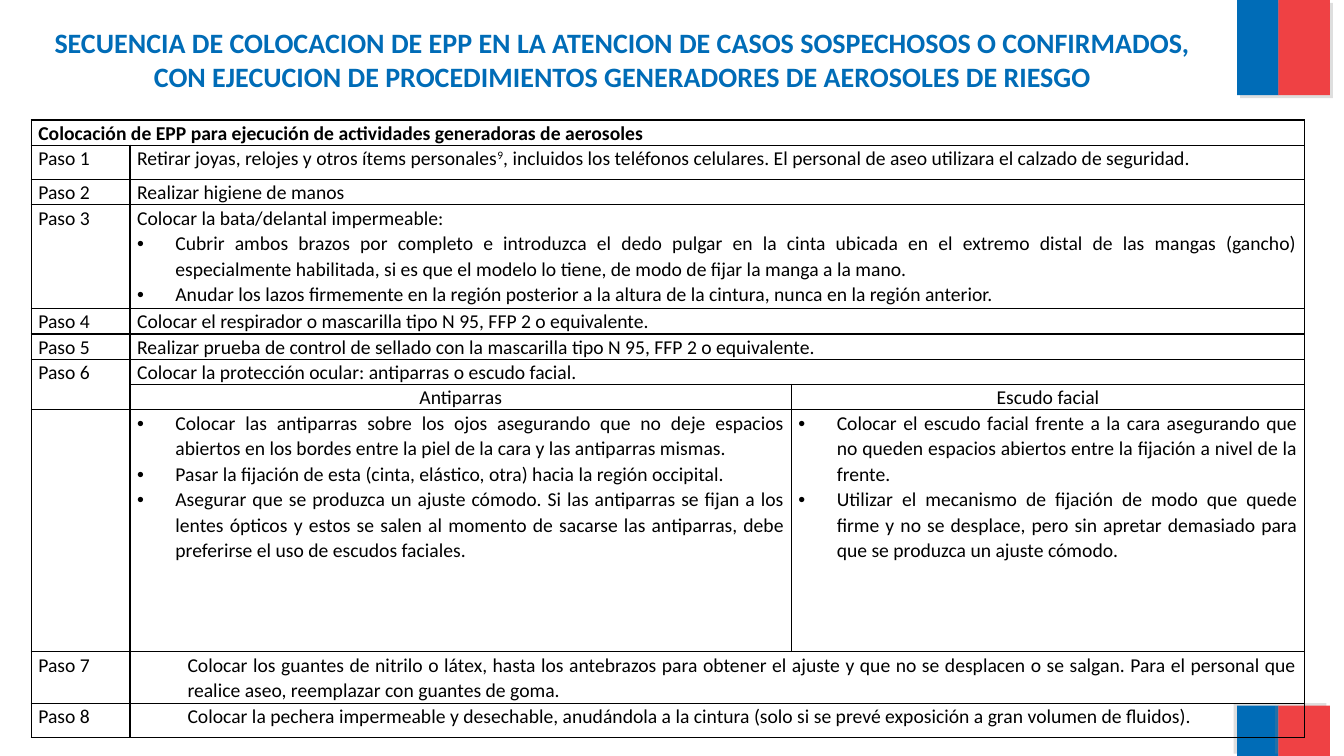
from lxml import etree
from pptx import Presentation, util as u
from pptx.dml.color import RGBColor
from pptx.enum import shapes, text
from pptx.oxml.ns import qn

COLORS = {"blue": "006CB7", "red": "EF4144", "black": "000000", "shadow": "808080"}
ALIGN = text.PP_ALIGN
BULLET = {"left": 0.38, "hanging": 0.38, "bullet": "•"}
INDENT = {"left": 0.5}

COLUMNS = [7.35, 49.21, 38.18]  # percent of the slide's width
LINE, TALL = 3.35, 4.53  # percent of the slide's height
ROWS = [LINE, TALL, LINE, 13.73, LINE, LINE, LINE, LINE, 32, 6.8, TALL]

TITLE = ("SECUENCIA DE COLOCACION DE EPP EN LA ATENCION DE CASOS SOSPECHOSOS O CONFIRMADOS, "
         "CON EJECUCION DE PROCEDIMIENTOS GENERADORES DE AEROSOLES DE RIESGO")
HEADING = "Colocación de EPP para ejecución de actividades generadoras de aerosoles"

# Table row -> paragraphs of the step, each with its format; ^ encloses a superscript
STEPS = {
    1: [("Retirar joyas, relojes y otros ítems personales^9^, incluidos los teléfonos celulares. "
         "El personal de aseo utilizara el calzado de seguridad.", {})],
    2: [("Realizar higiene de manos", {})],
    3: [("Colocar la bata/delantal impermeable:", {}),
        ("Cubrir ambos brazos por completo e introduzca el dedo pulgar en la cinta ubicada en el "
         "extremo distal de las mangas (gancho) especialmente habilitada, si es que el modelo lo "
         "tiene, de modo de fijar la manga a la mano.", BULLET),
        ("Anudar los lazos firmemente en la región posterior a la altura de la cintura, nunca en "
         "la región anterior.", BULLET)],
    4: [("Colocar el respirador o mascarilla tipo N 95, FFP 2 o equivalente.", {})],
    5: [("Realizar prueba de control de sellado con la mascarilla tipo N 95, FFP 2 o "
         "equivalente.", {})],
    6: [("Colocar la protección ocular: antiparras o escudo facial.", {})],
    9: [("Colocar los guantes de nitrilo o látex, hasta los antebrazos para obtener el ajuste y "
         "que no se desplacen o se salgan. Para el personal que realice aseo, reemplazar con "
         "guantes de goma.", INDENT)],
    10: [("Colocar la pechera impermeable y desechable, anudándola a la cintura (solo si se prevé "
          "exposición a gran volumen de fluidos).", INDENT)],
}
EYEWEAR = {
    "Antiparras": [
        "Colocar las antiparras sobre los ojos asegurando que no deje espacios abiertos en los "
        "bordes entre la piel de la cara y las antiparras mismas.",
        "Pasar la fijación de esta (cinta, elástico, otra) hacia la región occipital.",
        "Asegurar que se produzca un ajuste cómodo. Si las antiparras se fijan a los lentes "
        "ópticos y estos se salen al momento de sacarse las antiparras, debe preferirse el uso de "
        "escudos faciales."],
    "Escudo facial": [
        "Colocar el escudo facial frente a la cara asegurando que no queden espacios abiertos "
        "entre la fijación a nivel de la frente.",
        "Utilizar el mecanismo de fijación de modo que quede firme y no se desplace, pero sin "
        "apretar demasiado para que se produzca un ajuste cómodo."],
}


def add_xml(parent, tag, **attributes):
    return etree.SubElement(parent, qn(tag), attributes)


def write(para, content, size=14, color="black", bold=False, align=ALIGN.JUSTIFY,
          spacing=1.07, left=0, hanging=0, bullet=None):
    """Fill a paragraph; text between ^ marks is raised."""
    para.alignment, para.line_spacing = align, spacing
    properties = para._p.get_or_add_pPr()
    properties.set("marL", str(u.Inches(left)))
    properties.set("indent", str(-u.Inches(hanging)))
    if bullet:
        add_xml(properties, "a:buFont", typeface="Arial")
        add_xml(properties, "a:buChar", char=bullet)
    for index, piece in enumerate(content.split("^")):
        span = para.add_run()
        span.text = piece
        span.font.name, span.font.size, span.font.bold = "Calibri", u.Pt(size), bold
        span.font.color.rgb = RGBColor.from_string(COLORS[color])
        if index % 2:
            span.font._element.set("baseline", "30000")


class Page:
    """A slide whose lengths are given in percent of its size."""

    def __init__(self, deck):
        self.deck = deck
        self.shapes = deck.slides.add_slide(deck.slide_layouts[6]).shapes

    def across(self, share):
        return round(self.deck.slide_width * share / 100)

    def down(self, share):
        return round(self.deck.slide_height * share / 100)

    def place(self, left, top, width, height):
        return self.across(left), self.down(top), self.across(width), self.down(height)

    def block(self, area, color, shadow_angle):
        box = self.shapes.add_shape(shapes.MSO_SHAPE.RECTANGLE, *self.place(*area))
        box.fill.solid()
        box.fill.fore_color.rgb = RGBColor.from_string(COLORS[color])
        box.line.fill.background()
        box.shadow.inherit = False
        effects = box._element.spPr.find(qn("a:effectLst"))
        shadow = add_xml(effects, "a:outerShdw", blurRad="0", dist=str(u.Pt(3)),
                         dir=str(shadow_angle * 60000), algn="ctr", rotWithShape="0")
        tint = add_xml(shadow, "a:srgbClr", val=COLORS["shadow"])
        add_xml(tint, "a:alpha", val="25000")

    def title(self, area, content):
        frame = self.shapes.add_textbox(*self.place(*area)).text_frame
        frame.word_wrap = True
        frame.vertical_anchor = text.MSO_ANCHOR.MIDDLE
        write(frame.paragraphs[0], content, size=20, color="blue", bold=True,
              align=ALIGN.CENTER, spacing=1.0)

    def table(self, left, top, columns, rows):
        area = self.place(left, top, sum(columns), sum(rows))
        table = self.shapes.add_table(len(rows), len(columns), *area).table
        table.first_row = table.horz_banding = False
        for column, share in zip(table.columns, columns):
            column.width = self.across(share)
        for row, share in zip(table.rows, rows):
            row.height = self.down(share)
        for cell in table.iter_cells():
            self.outline(cell)
        return table

    def outline(self, cell):
        cell.margin_left = cell.margin_right = u.Inches(0.07)
        cell.margin_top = cell.margin_bottom = 0
        properties = cell._tc.get_or_add_tcPr()
        for side in "LRTB":
            line = add_xml(properties, f"a:ln{side}", w=str(u.Pt(1)))
            fill = add_xml(line, "a:solidFill")
            add_xml(fill, "a:srgbClr", val=COLORS["black"])
        cell.fill.background()

    def fill_cell(self, cell, paragraphs):
        frame = cell.text_frame
        for index, (content, style) in enumerate(paragraphs):
            para = frame.add_paragraph() if index else frame.paragraphs[0]
            write(para, content, **style)


def main():
    deck = Presentation()
    deck.slide_width, deck.slide_height = u.Inches(13.33), u.Inches(7.5)
    page = Page(deck)

    for top, height, angle in ((0, 12.6, 45), (93.33, 6.67, 215)):
        page.block((92.05, top, 3.08, height), "blue", angle)
        page.block((95.12, top, 3.83, height), "red", angle)
    page.title((1.65, 2.27, 89.35, 11.07), TITLE)

    table = page.table(2.33, 15.87, COLUMNS, ROWS)
    table.cell(0, 0).merge(table.cell(0, 2))
    table.cell(6, 0).merge(table.cell(7, 0))
    page.fill_cell(table.cell(0, 0), [(HEADING, {"bold": True})])
    for number, (row, paragraphs) in enumerate(STEPS.items(), 1):
        table.cell(row, 1).merge(table.cell(row, 2))
        page.fill_cell(table.cell(row, 0), [(f"Paso {number}", {})])
        page.fill_cell(table.cell(row, 1), paragraphs)
    for column, (name, items) in enumerate(EYEWEAR.items(), 1):
        page.fill_cell(table.cell(7, column), [(name, {"align": ALIGN.CENTER})])
        page.fill_cell(table.cell(8, column), [(item, BULLET) for item in items])

    deck.save("out.pptx")


if __name__ == "__main__":
    main()
